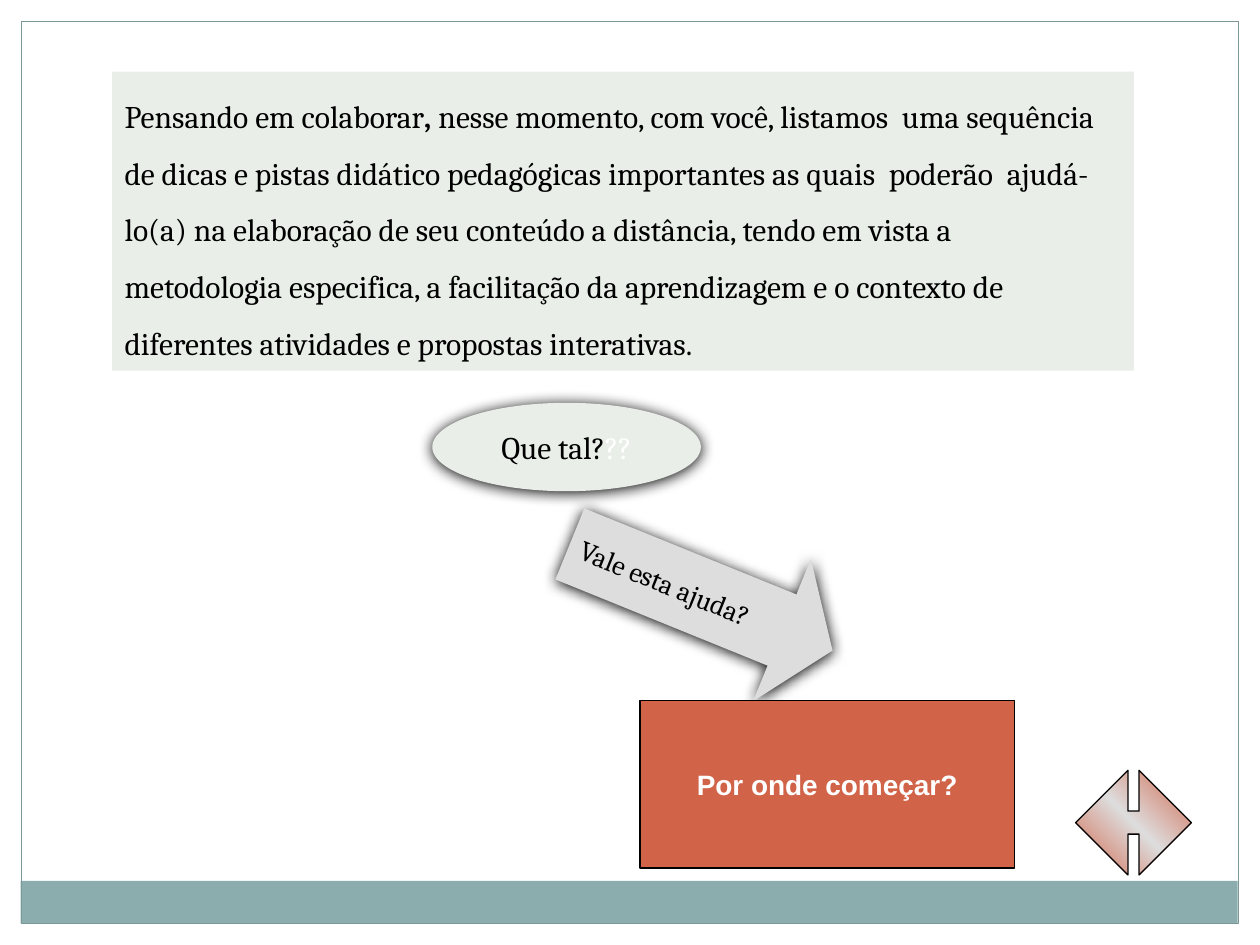
import pptx
import pptx.dml.color
import pptx.enum.shapes
import pptx.enum.text
import pptx.oxml
import pptx.oxml.ns
import pptx.util

Pt = pptx.util.Pt
RGBColor = pptx.dml.color.RGBColor
Shape = pptx.enum.shapes.MSO_SHAPE
Align = pptx.enum.text.PP_ALIGN
Anchor = pptx.enum.text.MSO_ANCHOR

BLACK = RGBColor(0x00, 0x00, 0x00)
WHITE = RGBColor(0xFF, 0xFF, 0xFF)
TEAL = RGBColor(0x8C, 0xAD, 0xAE)
FRAME = RGBColor(0x7C, 0x99, 0x9A)
PALE_GREEN = RGBColor(0xE9, 0xEF, 0xE8)
GREY = RGBColor(0xDD, 0xDD, 0xDD)
BRICK = RGBColor(0xD1, 0x63, 0x49)


class SlideBuilder:
    serif = "Cambria"
    sans = "Arial"
    line_width = 0.75

    def __init__(self, slide):
        self.slide = slide

    def shape(self, kind, box, fill=None, line=None, rotation=0):
        shape = self.slide.shapes.add_shape(kind, *(Pt(length) for length in box))
        shape.shadow.inherit = False
        shape.rotation = rotation
        if fill is None:
            shape.fill.background()
        else:
            shape.fill.solid()
            shape.fill.fore_color.rgb = fill
        if line is None:
            shape.line.fill.background()
        else:
            shape.line.color.rgb = line
            shape.line.width = Pt(self.line_width)
        return shape

    def text(self, shape, runs, size, font=serif, align=Align.LEFT,
             anchor=Anchor.MIDDLE, spacing=None):
        frame = shape.text_frame
        frame.word_wrap = True
        frame.vertical_anchor = anchor
        paragraph = frame.paragraphs[0]
        paragraph.alignment = align
        paragraph.line_spacing = spacing
        for words, color, bold in runs:
            run = paragraph.add_run()
            run.text = words
            run.font.name = font
            run.font.size = Pt(size)
            run.font.bold = bold
            run.font.color.rgb = color

    def shadow(self, shape):
        effects = shape._element.spPr.find(pptx.oxml.ns.qn("a:effectLst"))
        effects.append(pptx.oxml.parse_xml(
            f'<a:outerShdw {pptx.oxml.ns.nsdecls("a")} blurRad="{Pt(8.5)}" '
            f'dist="{Pt(1)}" dir="5400000" algn="ctr" rotWithShape="0">'
            f'<a:srgbClr val="{BLACK}"/></a:outerShdw>'))

    def gradient(self, shape, colors, angle):
        shape.fill.gradient()
        shape.fill.gradient_angle = angle
        gradient = shape._element.spPr.find(pptx.oxml.ns.qn("a:gradFill"))
        gradient.set("rotWithShape", "0")
        stops = gradient.find(pptx.oxml.ns.qn("a:gsLst"))
        for stop in list(stops):
            stops.remove(stop)
        for index, color in enumerate(colors):
            position = 100000 * index // (len(colors) - 1)
            stops.append(pptx.oxml.parse_xml(
                f'<a:gs {pptx.oxml.ns.nsdecls("a")} pos="{position}">'
                f'<a:srgbClr val="{color}"/></a:gs>'))


def main():
    presentation = pptx.Presentation()
    presentation.slide_width = Pt(720)
    presentation.slide_height = Pt(540)
    builder = SlideBuilder(
        presentation.slides.add_slide(presentation.slide_layouts[6]))

    builder.shape(Shape.RECTANGLE, (11.75, 503.3, 695.5, 24.4), TEAL)
    builder.shape(Shape.RECTANGLE, (12.2, 12.2, 695.5, 515.5), line=FRAME)

    introduction = builder.shape(
        Shape.RECTANGLE, (64.1, 41, 583.9, 170.8), PALE_GREEN)
    builder.text(introduction, [
        ("Pensando em colaborar", BLACK, False),
        (", ", BLACK, True),
        ("nesse momento, com você, listamos  uma sequência de dicas e pistas "
         "didático pedagógicas importantes as quais  poderão  ajudá-lo(a) na "
         "elaboração de seu conteúdo a distância, tendo em vista a  metodologia "
         "especifica, a facilitação da aprendizagem e o contexto de diferentes "
         "atividades e propostas interativas.", BLACK, False),
    ], 18, anchor=Anchor.TOP, spacing=1.5)

    question = builder.shape(Shape.OVAL, (247, 230.2, 153.5, 50.5), PALE_GREEN)
    builder.shadow(question)
    builder.text(question, [(" Que tal?", BLACK, False), ("?? ", WHITE, False)],
                 18, align=Align.CENTER)

    help_arrow = builder.shape(
        Shape.RIGHT_ARROW, (319.7, 297.4, 162, 87.8), GREY, rotation=22.1)
    help_arrow.adjustments[1] = 0.355
    builder.shadow(help_arrow)
    builder.text(help_arrow, [("Vale esta ajuda?", BLACK, False)], 16)

    navigation = builder.shape(
        Shape.UP_DOWN_ARROW, (617.8, 437, 59.8, 66.2), GREY, BLACK, rotation=90)
    navigation.adjustments[1] = 0.22
    builder.gradient(navigation, [BRICK, GREY, BRICK], 45)

    start = builder.shape(
        Shape.RECTANGLE, (365.8, 400.3, 213.8, 95.8), BRICK, BLACK)
    builder.text(start, [("Por onde começar?", WHITE, True)], 16,
                 font=builder.sans, align=Align.CENTER)

    presentation.save("out.pptx")


if __name__ == "__main__":
    main()
